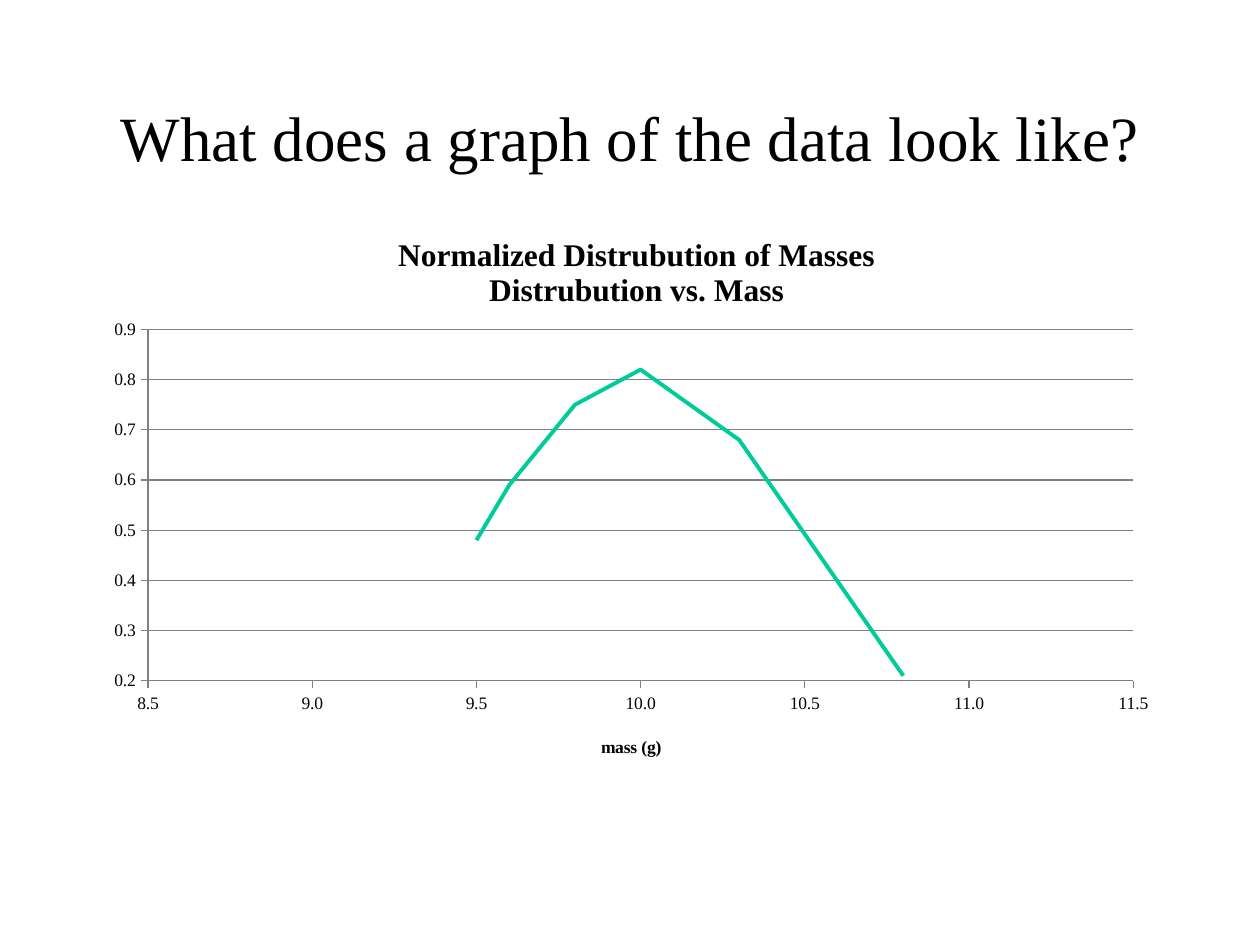
from lxml.etree import SubElement
from pptx import Presentation
from pptx.chart.data import XyChartData
from pptx.dml.color import RGBColor
from pptx.enum.chart import XL_CHART_TYPE, XL_TICK_MARK
from pptx.enum.text import MSO_ANCHOR, PP_ALIGN
from pptx.oxml.ns import qn
from pptx.util import Inches, Pt

HEADING = "What does a graph of the data look like?"
CHART_TITLE = "Normalized Distrubution of Masses\nDistrubution vs. Mass"
MASS_TITLE = "mass (g)"
POINTS = [(9.5, 0.48), (9.6, 0.59), (9.8, 0.75), (10, 0.82), (10.3, 0.68), (10.8, 0.21)]
MASS_AXIS = {"minimum_scale": 8.5, "maximum_scale": 11.5, "major_unit": 0.5,
             "has_major_gridlines": False}
DISTRIBUTION_AXIS = {"minimum_scale": 0.2, "maximum_scale": 0.9, "major_unit": 0.1,
                     "has_major_gridlines": True}
AXIS_FORMAT = {"major_tick_mark": XL_TICK_MARK.OUTSIDE, "minor_tick_mark": XL_TICK_MARK.NONE}
FONT, BLACK, GRAY, GREEN = "Times New Roman", "000000", "808080", "00CC99"
WIDTH, HEIGHT = Inches(10), Inches(7.5)
LEFT, CONTENT_WIDTH = Inches(0.75), Inches(8.5)


def color(value):
    return RGBColor.from_string(value)


def apply(target, values):
    for name, value in values.items():
        setattr(target, name, value)


def style_font(font, size, bold=False):
    apply(font, {"name": FONT, "size": Pt(size), "bold": bold})
    font.color.rgb = color(BLACK)


def style_line(line, value, width):
    line.color.rgb = color(value)
    line.width = Pt(width)


def place(element, index, shares):
    for old in element.findall(qn("c:layout")):
        element.remove(old)
    layout = SubElement(element, qn("c:layout"))
    element.insert(index, layout)
    manual = SubElement(layout, qn("c:manualLayout"))
    if "w" in shares:
        SubElement(manual, qn("c:layoutTarget")).set("val", "inner")
    for name in ("x", "y"):
        SubElement(manual, qn(f"c:{name}Mode")).set("val", "edge")
    for name, share in shares.items():
        SubElement(manual, qn(f"c:{name}")).set("val", str(share))


def add_title(owner, text, size, shares):
    owner.has_title = True
    title = owner.chart_title if hasattr(owner, "chart_title") else owner.axis_title
    frame = title.text_frame
    frame.text = text
    for paragraph in frame.paragraphs:
        for run in paragraph.runs:
            style_font(run.font, size, True)
    place(title.format.line and frame._txBody.getparent().getparent(), 1, shares)


def add_heading(slide):
    box = slide.shapes.add_textbox(LEFT, Inches(0.67), CONTENT_WIDTH, Inches(0.83))
    frame = box.text_frame
    apply(frame, {"word_wrap": True, "vertical_anchor": MSO_ANCHOR.MIDDLE})
    paragraph = frame.paragraphs[0]
    paragraph.alignment = PP_ALIGN.CENTER
    run = paragraph.add_run()
    run.text = HEADING
    style_font(run.font, 36)


def add_mass_chart(slide):
    data = XyChartData()
    points = data.add_series("Series 1")
    for mass, distribution in POINTS:
        points.add_data_point(mass, distribution)
    chart = slide.shapes.add_chart(XL_CHART_TYPE.XY_SCATTER_SMOOTH_NO_MARKERS, LEFT,
                                   Inches(1.67), CONTENT_WIDTH, Inches(4.5), data).chart
    chart.has_legend = False
    style_font(chart.font, 10)
    for axis, values in ((chart.category_axis, MASS_AXIS), (chart.value_axis, DISTRIBUTION_AXIS)):
        apply(axis, values | AXIS_FORMAT)
        apply(axis.tick_labels, {"number_format": "0.0", "number_format_is_linked": False})
        style_font(axis.tick_labels.font, 10)
        style_line(axis.format.line, GRAY, 0.75)
    style_line(chart.value_axis.major_gridlines.format.line, GRAY, 0.75)
    chart.plots[0].vary_by_categories = False
    series = chart.plots[0].series[0]
    series.smooth = True
    style_line(series.format.line, GREEN, 2.25)
    add_title(chart, CHART_TITLE, 18, {"x": 0.28, "y": 0.04})
    add_title(chart.category_axis, MASS_TITLE, 10, {"x": 0.47, "y": 0.92})
    plot_area = chart.plots[0]._element.getparent()
    place(plot_area, 0, {"x": 0.05, "y": 0.21, "w": 0.92, "h": 0.62})


def main():
    presentation = Presentation()
    apply(presentation, {"slide_width": WIDTH, "slide_height": HEIGHT})
    slide = presentation.slides.add_slide(presentation.slide_layouts[6])
    add_heading(slide)
    add_mass_chart(slide)
    presentation.save("out.pptx")


if __name__ == "__main__":
    main()
